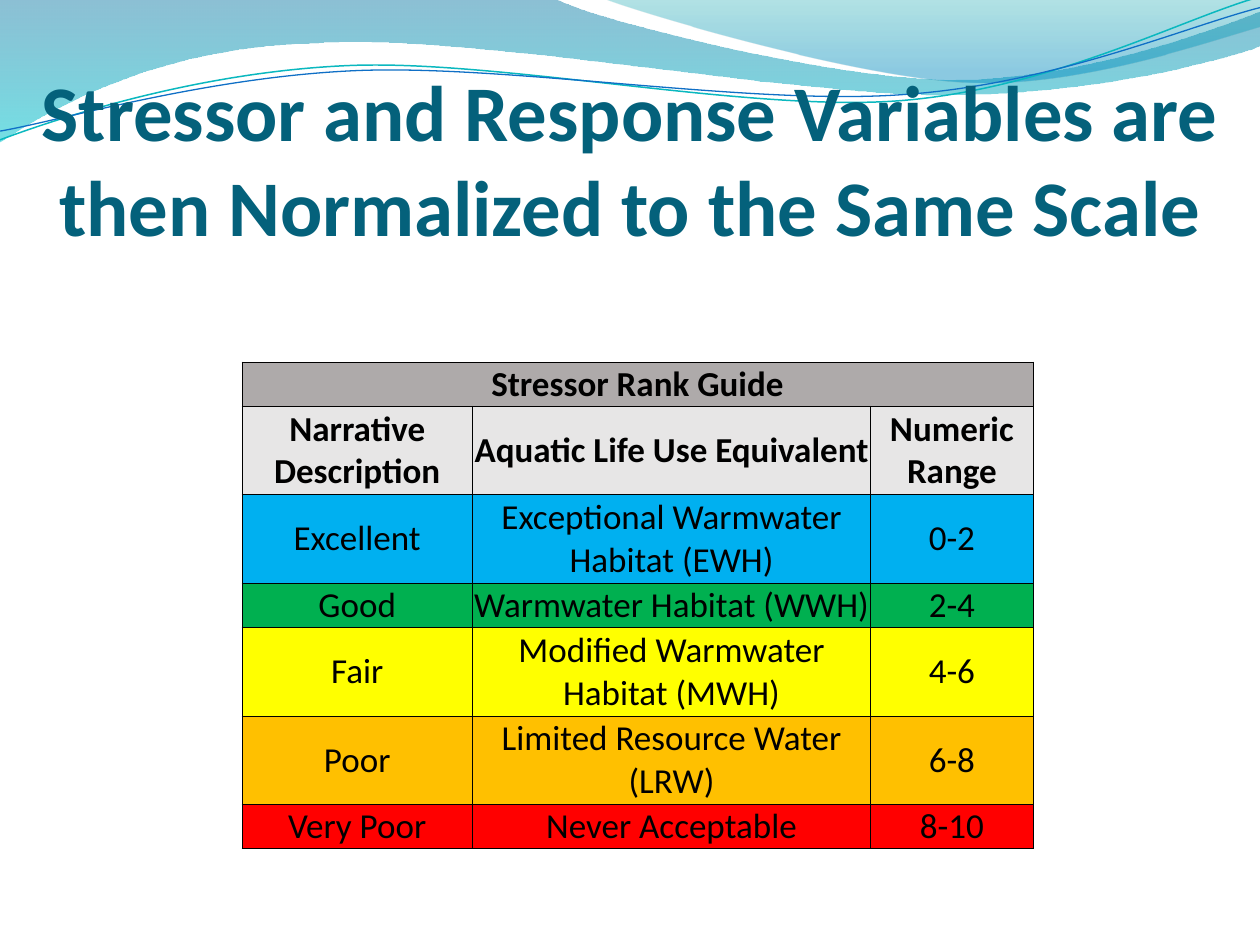
import math

import lxml.etree
import pptx
import pptx.dml.color
import pptx.enum.text
import pptx.oxml.ns
import pptx.util

Inches = pptx.util.Inches
Pt = pptx.util.Pt
RGBColor = pptx.dml.color.RGBColor
qn = pptx.oxml.ns.qn

FONT = "Calibri"
BLACK = RGBColor(0x00, 0x00, 0x00)
TITLE_TEAL = RGBColor(0x04, 0x61, 0x7B)
WAVE_BLUE = RGBColor(0x00, 0x74, 0xA1)
WAVE_CYAN = RGBColor(0x00, 0xC6, 0xCF)
CREST_TEAL = RGBColor(0x00, 0xA1, 0xA9)
CREST_BLUE = RGBColor(0x00, 0x8B, 0xBF)
LINE_TEAL = RGBColor(0x0A, 0xB8, 0xBF)
LINE_BLUE = RGBColor(0x0F, 0x6F, 0xC6)
HEADING_GREY = RGBColor(0xAE, 0xAA, 0xAA)
COLUMN_GREY = RGBColor(0xE7, 0xE6, 0xE6)

NO_STYLE = "{2D5ABB26-0587-4C30-8999-92F81FD0307C}"

# Wave outlines: one point is a straight step, three are a Bezier curve
WAVE = [[(0, 0)], [(4.4, -0.01)], [(4.76, 0.17), (6.64, 0.63), (7.58, 0.63)],
        [(8.53, 0.63), (9.58, 0.26), (10, 0.09)], [(10.01, 0.36)],
        [(9.83, 0.44), (8.7, 0.76), (7.46, 0.75)],
        [(6.22, 0.75), (3.82, 0.28), (2.57, 0.34)],
        [(1.29, 0.36), (0.46, 0.83), (-0.01, 1.13)]]
CREST = [[(4.79, -0.01)], [(5.09, 0.11), (6.82, 0.62), (7.69, 0.65)],
         [(8.56, 0.69), (9.61, 0.32), (10, 0.21)], [(10, 0)]]
TEAL_RIPPLE = [[(0, 1.11)], [(0.48, 0.93), (1.58, 0.57), (2.77, 0.52)],
               [(3.95, 0.47), (5.93, 0.89), (7.13, 0.8)],
               [(8.33, 0.71), (9.38, 0.15), (9.98, -0.02)]]
BLUE_RIPPLE = [[(0, 1.04)], [(0.47, 0.96), (1.64, 0.61), (2.83, 0.56)],
               [(4.03, 0.51), (5.97, 0.84), (7.17, 0.75)],
               [(8.36, 0.67), (9.41, 0.21), (10, 0.06)]]
RIPPLE_TILT = 357.3

COLUMN_WIDTHS = [1.83, 3.16, 1.29, 0.81]
ROW_LINES = [1, 1, 1, 2, 2, 1, 2, 2, 1, 1]
FIRST_ROW = 2
RANK_ROWS = [
    (HEADING_GREY, True, ["Stressor Rank Guide", "", ""]),
    (COLUMN_GREY, True,
     ["Narrative Description", "Aquatic Life Use Equivalent", "Numeric Range"]),
    (RGBColor(0x00, 0xB0, 0xF0), False,
     ["Excellent", "Exceptional Warmwater Habitat (EWH)", "0-2"]),
    (RGBColor(0x00, 0xB0, 0x50), False, ["Good", "Warmwater Habitat (WWH)", "2-4"]),
    (RGBColor(0xFF, 0xFF, 0x00), False, ["Fair", "Modified Warmwater Habitat (MWH)", "4-6"]),
    (RGBColor(0xFF, 0xC0, 0x00), False, ["Poor", "Limited Resource Water (LRW)", "6-8"]),
    (RGBColor(0xFF, 0x00, 0x00), False, ["Very Poor", "Never Acceptable", "8-10"]),
]


def turn(outline, degrees, center_x, center_y):
    cos, sin = math.cos(math.radians(degrees)), math.sin(math.radians(degrees))
    return [[(center_x + (x - center_x) * cos - (y - center_y) * sin,
              center_y + (x - center_x) * sin + (y - center_y) * cos) for x, y in step]
            for step in outline]


def add_outline(shapes, outline, left, top, closed):
    points = [(Inches(left + x), Inches(top + y)) for step in outline for x, y in step]
    builder = shapes.build_freeform(*points[0])
    builder.add_line_segments(points[1:], close=closed)
    freeform = builder.convert_to_shape()
    freeform.shadow.inherit = False

    # Join each three points of a curved step into one Bezier segment
    segments = iter(list(freeform._element.iter(qn("a:lnTo"))))
    for step in outline[1:]:
        parts = [next(segments) for _ in step]
        if len(parts) == 3:
            curve = lxml.etree.Element(qn("a:cubicBezTo"))
            parts[0].addprevious(curve)
            for part in parts:
                curve.append(part[0])
                part.getparent().remove(part)
    return freeform


def add_waves(slide, left, top):
    # Translucent gradient bands
    for outline, stops in ((WAVE, [(0, WAVE_BLUE, 45), (1, WAVE_CYAN, 55)]),
                           (CREST, [(0, CREST_TEAL, 30), (0.8, CREST_BLUE, 45)])):
        band = add_outline(slide.shapes, outline, left, top, True)
        band.line.fill.background()
        band.fill.gradient()
        band.fill.gradient_angle = 270
        for stop, (position, color, opacity) in zip(band.fill.gradient_stops, stops):
            stop.position = position
            stop.color.rgb = color
        gradient_colors = band.fill._xPr.iter(qn("a:srgbClr"))
        for color_xml, (position, color, opacity) in zip(gradient_colors, stops):
            lxml.etree.SubElement(color_xml, qn("a:alpha"), val=str(opacity * 1000))

    # Thin tilted ripples
    ripples = slide.shapes.add_group_shape()
    for outline, color, width, center_y in ((TEAL_RIPPLE, LINE_TEAL, 0.85, 0.58),
                                            (BLUE_RIPPLE, LINE_BLUE, 0.75, 0.59)):
        level_outline = turn(outline, -RIPPLE_TILT, 4.99, center_y)
        ripple = add_outline(ripples.shapes, level_outline, left, top, False)
        ripple.rotation = RIPPLE_TILT
        ripple.fill.background()
        ripple.line.color.rgb = color
        ripple.line.width = Pt(width)


def add_text(paragraph, text, size, color, bold):
    paragraph.alignment = pptx.enum.text.PP_ALIGN.CENTER
    run = paragraph.add_run()
    run.text = text
    run.font.name = FONT
    run.font.size = Pt(size)
    run.font.bold = bold
    run.font.color.rgb = color


def add_title(slide, left, top, width, height):
    title = slide.shapes.add_textbox(Inches(left), Inches(top), Inches(width), Inches(height))
    frame = title.text_frame
    frame.word_wrap = True
    frame.vertical_anchor = pptx.enum.text.MSO_ANCHOR.BOTTOM
    frame.margin_left = frame.margin_right = frame.margin_bottom = 0
    frame.margin_top = Inches(0.05)
    add_text(frame.paragraphs[0],
             "Stressor and Response Variables are then Normalized to the Same Scale",
             45, TITLE_TEAL, True)


def add_borders(cell):
    properties = cell._tc.get_or_add_tcPr()
    for i, side in enumerate(("a:lnL", "a:lnR", "a:lnT", "a:lnB")):
        border = lxml.etree.Element(qn(side), w=str(Pt(0.5)))
        solid = lxml.etree.SubElement(border, qn("a:solidFill"))
        lxml.etree.SubElement(solid, qn("a:srgbClr"), val=str(BLACK))
        properties.insert(i, border)


def add_rank_table(slide, left, top, width, height):
    frame = slide.shapes.add_table(len(ROW_LINES), len(COLUMN_WIDTHS), Inches(left),
                                   Inches(top), Inches(width), Inches(height))
    table = frame.table
    table.first_row = table.horz_banding = False
    table._tbl.tblPr.find(qn("a:tableStyleId")).text = NO_STYLE
    for column, column_width in zip(table.columns, COLUMN_WIDTHS):
        column.width = Inches(column_width)
    for row, lines in zip(table.rows, ROW_LINES):
        row.height = Inches(height * lines / sum(ROW_LINES))

    # Plain cells around the ranked ones
    for cell in table.iter_cells():
        cell.margin_left = cell.margin_right = cell.margin_top = cell.margin_bottom = 0
        cell.vertical_anchor = pptx.enum.text.MSO_ANCHOR.MIDDLE
        cell.fill.background()
        cell.text_frame.paragraphs[0].font.size = Pt(18)

    # Heading, column names and ranks
    for r, (color, bold, texts) in enumerate(RANK_ROWS, FIRST_ROW):
        for c, text in enumerate(texts):
            cell = table.cell(r, c)
            cell.fill.solid()
            cell.fill.fore_color.rgb = color
            add_borders(cell)
            if text:
                add_text(cell.text_frame.paragraphs[0], text, 20, BLACK, bold)
    table.cell(FIRST_ROW, 0).merge(table.cell(FIRST_ROW, 2))


def main():
    deck = pptx.Presentation()
    deck.slide_width, deck.slide_height = Inches(10), Inches(7.5)
    slide = deck.slides.add_slide(deck.slide_layouts[6])
    add_waves(slide, 0, 0)
    add_title(slide, 0.25, 0.5, 9.5, 1.5)
    add_rank_table(slide, 1.92, 2.17, 7.08, 4.92)
    deck.save("out.pptx")


if __name__ == "__main__":
    main()
